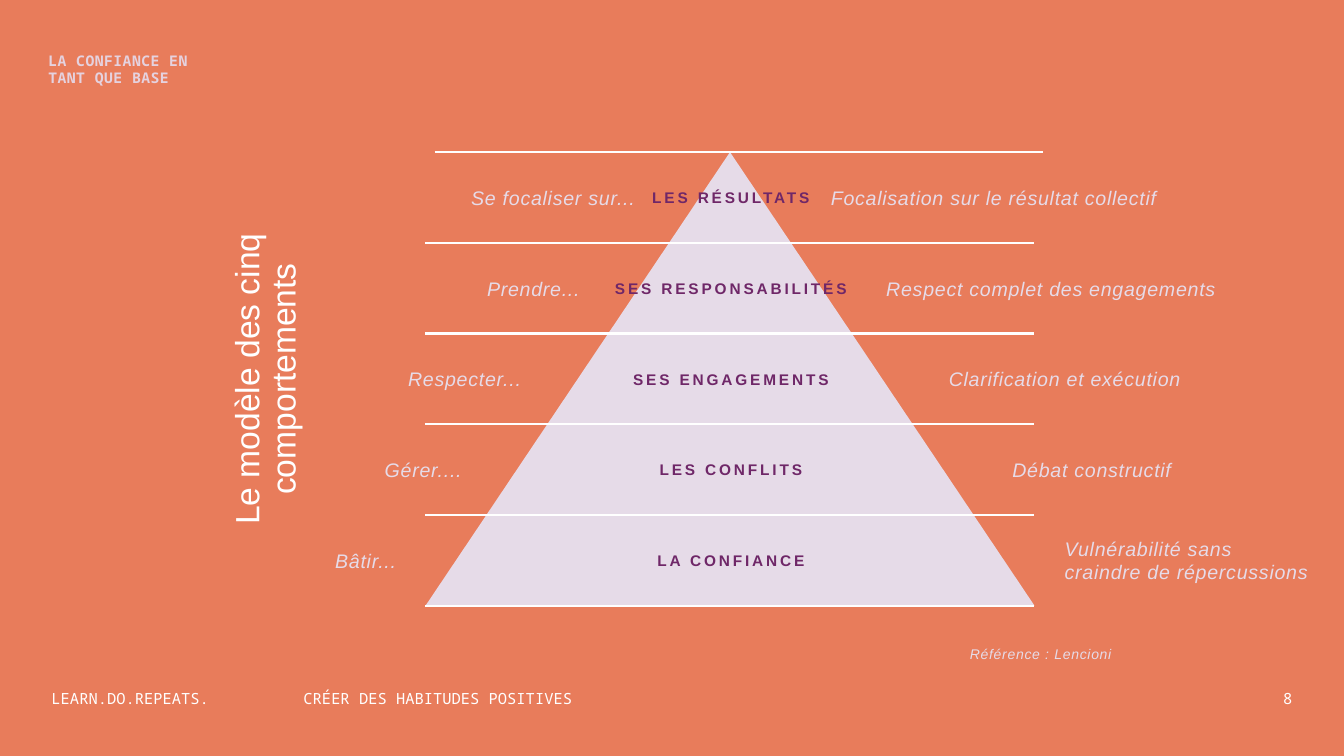
from pptx import Presentation, util as u
from pptx.dml.color import RGBColor
from pptx.enum import shapes, text
from pptx.oxml import ns
from lxml import etree

COLORS = {
    "background": "E87C5B",
    "white": "FFFFFF",
    "lilac": "E6DBE8",
    "pink": "E5D2DF",
    "plum": "6F2768",
}
SANS, MONO = "Arial", "Noto Sans Mono"
LEFT, CENTER, RIGHT = text.PP_ALIGN.LEFT, text.PP_ALIGN.CENTER, text.PP_ALIGN.RIGHT

# The slide is a grid of 100 columns by 25 rows.
WIDTH, HEIGHT = u.Inches(13.33), u.Inches(7.5)
COLUMN, ROW = WIDTH / 100, HEIGHT / 25

PYRAMID_LEFT, PYRAMID_TOP, PYRAMID_WIDTH = 31.66, 5.03, 45.31
LEVEL_ROWS = 3
SIDE_WIDTH = 13.43

# Verb, its right edge, behaviour, meaning, its left edge
LEVELS = [
    ("Se focaliser sur...", 47.26, "LES RÉSULTATS",
     "Focalisation sur le résultat collectif", 61.82),
    ("Prendre...", 43.14, "SES RESPONSABILITÉS",
     "Respect complet des engagements", 65.94),
    ("Respecter...", 38.78, "SES ENGAGEMENTS",
     "Clarification et exécution", 70.59),
    ("Gérer....", 34.36, "LES CONFLITS",
     "Débat constructif", 75.32),
    ("Bâtir...", 29.48, "LA CONFIANCE",
     "Vulnérabilité sans\ncraindre de répercussions", 79.22),
]
FOOTERS = [
    ("LEARN.DO.REPEATS.", 3.83, 15.9, LEFT),
    ("CRÉER DES HABITUDES POSITIVES", 22.58, 25.13, LEFT),
    ("8", 80.27, 15.9, RIGHT),
]


def color(name):
    return RGBColor.from_string(COLORS[name])


def cells(left, top, width, height):
    """Turn grid columns and rows into slide lengths."""
    return [round(n) for n in (left * COLUMN, top * ROW, width * COLUMN, height * ROW)]


def place(shape, *area):
    shape.left, shape.top, shape.width, shape.height = cells(*area)


def write(para, words, size, font, ink, bold=False, italic=False, spacing=0):
    """Add words run by run, with a line break between lines."""
    for number, line in enumerate(words.split("\n")):
        if number:
            para.add_line_break()
        span = para.add_run()
        span.text = line
        span.font.size, span.font.name = u.Pt(size), font
        span.font.bold, span.font.italic = bold, italic
        span.font.color.rgb = color(ink)
        if spacing:
            span._r.get_or_add_rPr().set("spc", str(round(spacing * 100)))


def set_frame(frame, wrap, anchor, inset=0):
    frame.auto_size = text.MSO_AUTO_SIZE.NONE
    frame.word_wrap = wrap
    frame.vertical_anchor = anchor
    if inset is not None:
        frame.margin_left = frame.margin_right = inset
        frame.margin_top = frame.margin_bottom = inset


def add_text(page, words, area, align, size, font, ink, **style):
    box = page.shapes.add_textbox(*cells(*area))
    footer = font == MONO
    anchor = text.MSO_ANCHOR.TOP if footer else text.MSO_ANCHOR.MIDDLE
    set_frame(box.text_frame, footer, anchor)
    para = box.text_frame.paragraphs[0]
    para.alignment = align
    write(para, words, size, font, ink, **style)


def add_note(page, words, left, top, align=LEFT, size=14):
    add_text(page, words, (left, top, SIDE_WIDTH, 1), align, size, SANS, "lilac",
             italic=True, spacing=0.5)


def add_rule(page, left, top):
    x, y, width, _ = cells(left, top, PYRAMID_WIDTH, 0)
    rule = page.shapes.add_connector(shapes.MSO_CONNECTOR.STRAIGHT, x, y, x + width, y)
    rule.line.color.rgb = color("white")
    rule.line.width = u.Pt(1.5)
    etree.SubElement(rule._element.spPr, ns.qn("a:effectLst"))


def fill_title(page):
    title = page.shapes.title
    place(title, 1.65, 11.77, 33.68, 1.53)
    title.rotation = 270
    set_frame(title.text_frame, True, text.MSO_ANCHOR.TOP, inset=None)
    para = title.text_frame.paragraphs[0]
    para.alignment, para.line_spacing = CENTER, 0.9
    write(para, "Le modèle des cinq comportements", 24, SANS, "white")


def fill_section_name(page):
    body = page.placeholders[1]
    place(body, 3.6, 1.7, 17.48, 1.57)
    set_frame(body.text_frame, True, text.MSO_ANCHOR.TOP)
    para = body.text_frame.paragraphs[0]
    para.space_before = u.Pt(0)
    props = para._p.get_or_add_pPr()
    props.set("marL", "0")
    props.set("indent", "0")
    etree.SubElement(props, ns.qn("a:buNone"))
    write(para, "LA CONFIANCE EN\nTANT QUE BASE", 10.5, MONO, "pink",
          bold=True, spacing=0.4)


def add_pyramid(page):
    area = cells(PYRAMID_LEFT, PYRAMID_TOP, PYRAMID_WIDTH, LEVEL_ROWS * len(LEVELS))
    pyramid = page.shapes.add_shape(shapes.MSO_SHAPE.ISOSCELES_TRIANGLE, *area)
    pyramid.shadow.inherit = False
    pyramid.fill.solid()
    pyramid.fill.fore_color.rgb = color("lilac")
    pyramid.line.fill.background()

    for number in range(len(LEVELS) + 1):
        left = PYRAMID_LEFT if number else 32.33
        add_rule(page, left, PYRAMID_TOP + number * LEVEL_ROWS)

    for number, (verb, verb_edge, behaviour, meaning, meaning_edge) in enumerate(LEVELS):
        top = PYRAMID_TOP + 1 + number * LEVEL_ROWS
        add_text(page, behaviour, (43.51, top, 21.76, 1), CENTER, 11, SANS, "plum",
                 bold=True, spacing=2)
        add_note(page, verb, verb_edge - SIDE_WIDTH, top, RIGHT)
        add_note(page, meaning, meaning_edge, top)


def main():
    deck = Presentation()
    deck.slide_width, deck.slide_height = WIDTH, HEIGHT
    page = deck.slides.add_slide(deck.slide_layouts[1])
    page.background.fill.solid()
    page.background.fill.fore_color.rgb = color("background")

    fill_title(page)
    fill_section_name(page)
    add_pyramid(page)
    add_note(page, "Référence : Lencioni", 72.17, 21.13, size=10)
    for words, left, width, align in FOOTERS:
        add_text(page, words, (left, 22.8, width, 0.63), align, 11, MONO, "white")
    deck.save("out.pptx")


if __name__ == "__main__":
    main()
